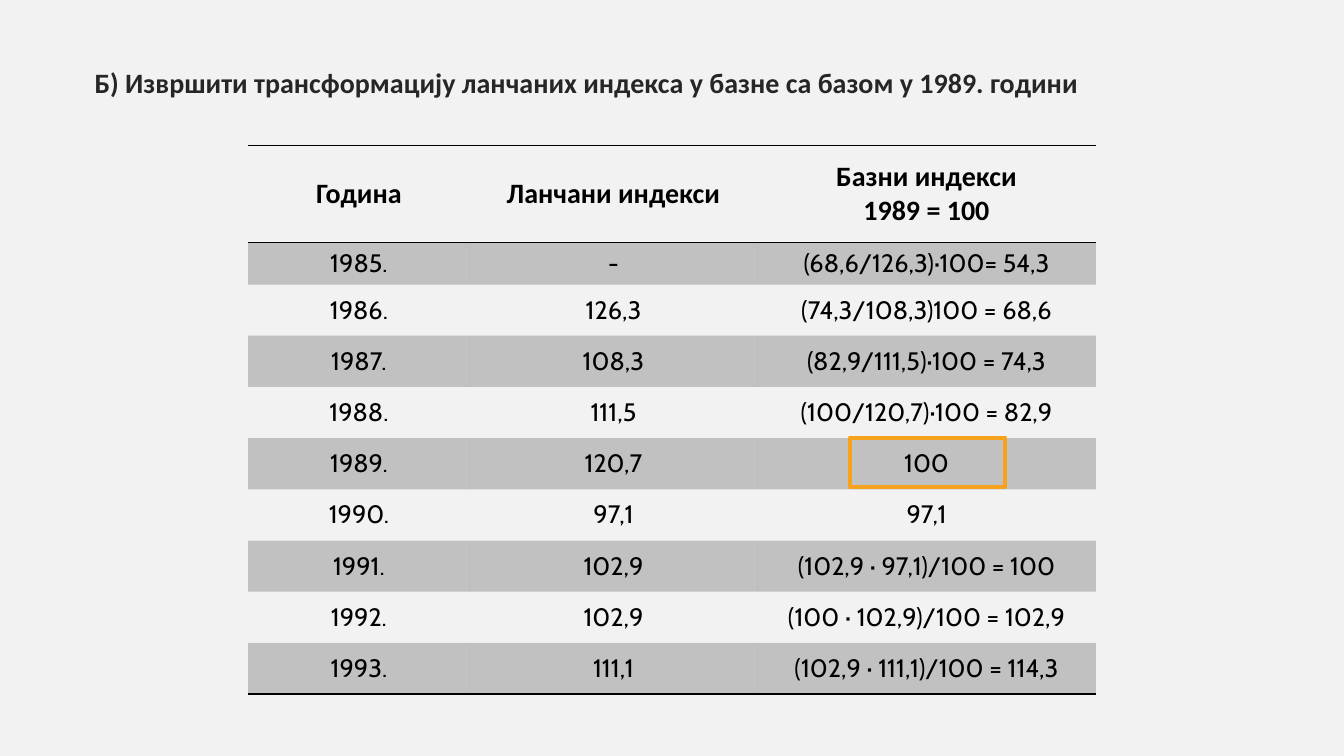
from pptx import Presentation
from pptx.dml.color import RGBColor
from pptx.enum import shapes, text
from pptx.oxml import ns, xmlchemy
from pptx.util import Cm, Pt

HEADING = "Б) Извршити трансформацију ланчаних индекса у базне са базом у 1989. години"
HEADERS = [["Година"], ["Ланчани индекси"], ["Базни индекси", "1989 = 100"]]
INDICES = [
    ("1985.", "-", "(68,6/126,3)·100= 54,3"),
    ("1986.", "126,3", "(74,3/108,3)100 = 68,6"),
    ("1987.", "108,3", "(82,9/111,5)·100 = 74,3"),
    ("1988.", "111,5", "(100/120,7)·100 = 82,9"),
    ("1989.", "120,7", "100"),
    ("1990.", "97,1", "97,1"),
    ("1991.", "102,9", "(102,9 · 97,1)/100 = 100"),
    ("1992.", "102,9", "(100 · 102,9)/100 = 102,9"),
    ("1993.", "111,1", "(102,9 · 111,1)/100 = 114,3"),
]
COLUMN_WIDTHS = [5.59, 7.24, 8.54]
ROW_HEIGHTS = [2.44, 1.06] + [1.29] * (len(INDICES) - 1)
NO_GRID_STYLE = "{2D5ABB26-0587-4C30-8999-92F81FD0307C}"

BACKGROUND = RGBColor(0xF2, 0xF2, 0xF2)
HEADING_COLOR = RGBColor(0x26, 0x26, 0x26)
BLACK = RGBColor(0, 0, 0)
ORANGE = RGBColor(0xF6, 0xA2, 0x1D)


def add_span(para, words, font, size, bold, color):
    span = para.add_run()
    span.text = words
    span.font.name = font
    span.font.size = Pt(size)
    span.font.bold = bold
    span.font.color.rgb = color


def add_child(parent, tag, **attributes):
    child = xmlchemy.OxmlElement(tag)
    for name, value in attributes.items():
        child.set(name, value)
    parent.append(child)
    return child


def shade(cell):
    cell.fill.solid()
    cell.fill.fore_color.rgb = BLACK
    fill = cell._tc.tcPr.find(ns.qn("a:solidFill"))
    add_child(fill.find(ns.qn("a:srgbClr")), "a:alpha", val="20000")


def add_border(cell, side):
    line = add_child(cell._tc.get_or_add_tcPr(), "a:ln" + side, w=str(Pt(1)))
    fill = add_child(line, "a:solidFill")
    add_child(fill, "a:srgbClr", val=str(BLACK))


def fill_cell(cell, lines, font, size, bold):
    cell.vertical_anchor = text.MSO_ANCHOR.MIDDLE
    for number, words in enumerate(lines):
        frame = cell.text_frame
        para = frame.add_paragraph() if number else frame.paragraphs[0]
        para.alignment = text.PP_ALIGN.CENTER
        add_span(para, words, font, size, bold, BLACK)


def add_heading(page):
    title = page.shapes.title
    title.left, title.top, title.width, title.height = Cm(2.13), Cm(1.52), Cm(29.6), Cm(1.2)
    frame = title.text_frame
    frame.word_wrap = True
    frame.auto_size = text.MSO_AUTO_SIZE.NONE
    frame.vertical_anchor = text.MSO_ANCHOR.TOP
    para = frame.paragraphs[0]
    para.alignment = text.PP_ALIGN.LEFT
    para.line_spacing = 1.0
    add_span(para, HEADING, "Calibri", 20, True, HEADING_COLOR)


def add_index_table(page):
    frame = page.shapes.add_table(
        len(ROW_HEIGHTS), len(COLUMN_WIDTHS), Cm(6.25), Cm(3.67),
        Cm(sum(COLUMN_WIDTHS)), Cm(sum(ROW_HEIGHTS)))
    table = frame.table
    table._tbl.tblPr.find(ns.qn("a:tableStyleId")).text = NO_GRID_STYLE
    for column, width in zip(table.columns, COLUMN_WIDTHS):
        column.width = Cm(width)
    for row, height in zip(table.rows, ROW_HEIGHTS):
        row.height = Cm(height)

    for column, lines in enumerate(HEADERS):
        cell = table.cell(0, column)
        fill_cell(cell, lines, "Calibri", 20, True)
        add_border(cell, "T")
        add_border(cell, "B")
        cell.fill.background()

    for row, values in enumerate(INDICES, start=1):
        for column, value in enumerate(values):
            cell = table.cell(row, column)
            fill_cell(cell, [value], "Cabin", 18, False)
            if row == len(INDICES):
                add_border(cell, "B")
            if row % 2:
                shade(cell)
            else:
                cell.fill.background()


def add_base_year_frame(page):
    box = page.shapes.add_shape(
        shapes.MSO_SHAPE.RECTANGLE, Cm(21.42), Cm(11.03), Cm(3.91), Cm(1.24))
    box.shadow.inherit = False
    box.fill.background()
    box.line.color.rgb = ORANGE
    box.line.width = Pt(3)


def main():
    deck = Presentation()
    deck.slide_width, deck.slide_height = Cm(33.87), Cm(19.05)
    page = deck.slides.add_slide(deck.slide_layouts.get_by_name("Title Only"))
    page.background.fill.solid()
    page.background.fill.fore_color.rgb = BACKGROUND
    add_heading(page)
    add_index_table(page)
    add_base_year_frame(page)
    deck.save("out.pptx")


if __name__ == "__main__":
    main()
